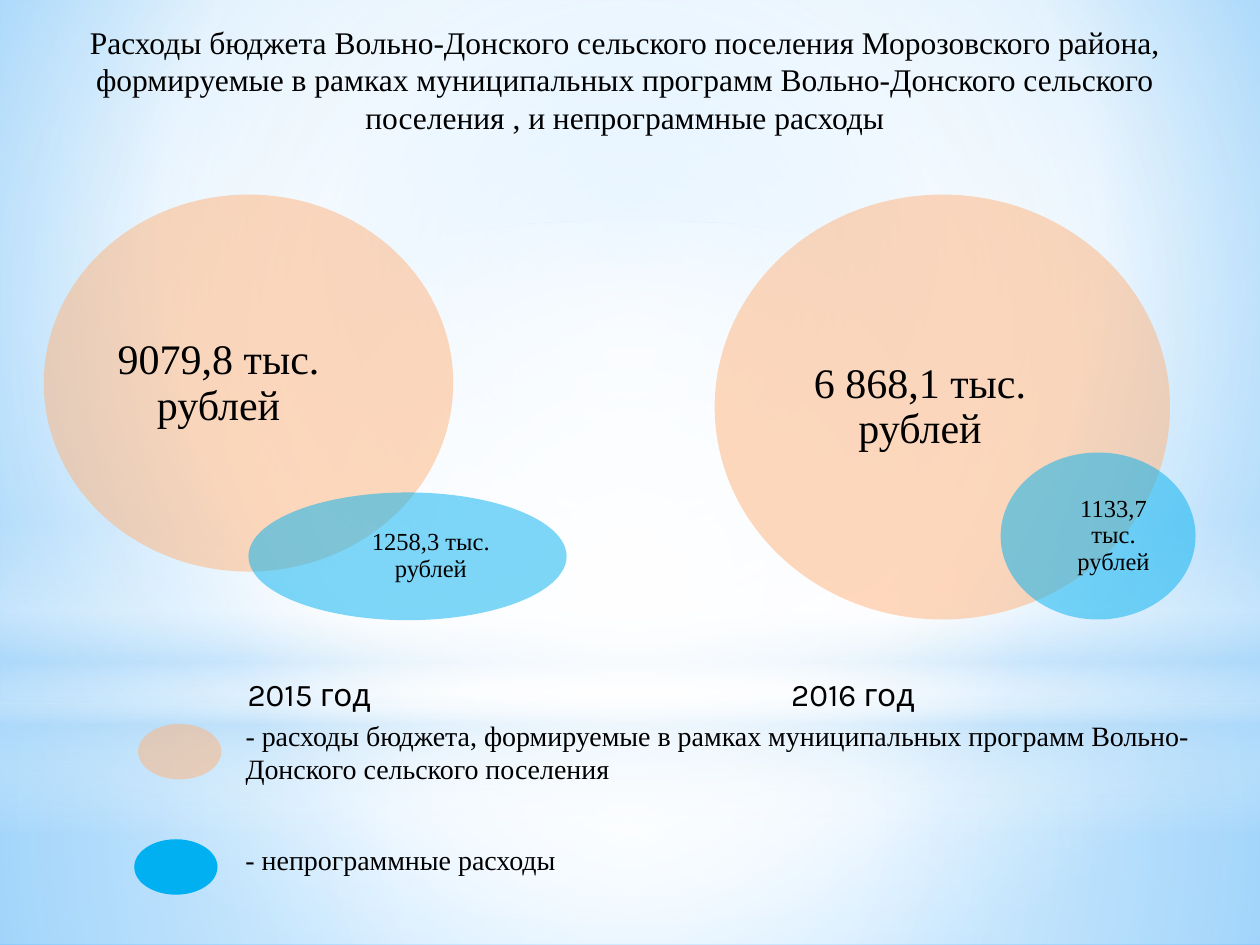
from lxml.etree import SubElement
from pptx import Presentation
from pptx.dml.color import RGBColor
from pptx.enum.shapes import MSO_SHAPE
from pptx.enum.text import MSO_ANCHOR, PP_ALIGN
from pptx.oxml.ns import qn
from pptx.util import Pt

BLACK = RGBColor(0x00, 0x00, 0x00)
WHITE = RGBColor(0xFF, 0xFF, 0xFF)
PEACH = RGBColor(0xFF, 0xB3, 0x7A)
BLUE = RGBColor(0x00, 0xB0, 0xF0)
PALE_BLUE = RGBColor(0xB4, 0xDC, 0xFA)
SKY = RGBColor(0x9E, 0xD5, 0xFF)
DEEP_SKY = RGBColor(0x5B, 0xB9, 0xFF)

SERIF = "Times New Roman"
SANS = "Karla"
CENTER = (50, 50, 50, 50)


def paint_gradient(fill, owner, stops, focus=None):
    """Stops are (position %, colour, opacity %); without a focus it runs downwards."""
    fill.gradient()
    gradient = owner.find(".//" + qn("a:gradFill"))
    gradient.clear()
    stop_list = SubElement(gradient, qn("a:gsLst"))
    for position, color, opacity in stops:
        stop = SubElement(stop_list, qn("a:gs"), pos=str(position * 1000))
        rgb = SubElement(stop, qn("a:srgbClr"), val=str(color))
        SubElement(rgb, qn("a:alpha"), val=str(opacity * 1000))
    if focus:
        circle = SubElement(gradient, qn("a:path"), path="circle")
        edges = {side: str(edge * 1000) for side, edge in zip("ltrb", focus)}
        SubElement(circle, qn("a:fillToRect"), edges)
    else:
        SubElement(gradient, qn("a:lin"), ang="5400000", scaled="0")


def add_text(box, text, size, font=SERIF, align=PP_ALIGN.LEFT):
    frame = slide.shapes.add_textbox(*map(Pt, box)).text_frame
    frame.word_wrap = True
    frame.text = text
    paragraph = frame.paragraphs[0]
    paragraph.alignment = align
    run_font = paragraph.runs[0].font
    run_font.name = font
    run_font.size = Pt(size)
    run_font.color.rgb = BLACK
    return frame


prs = Presentation()
prs.slide_width, prs.slide_height = Pt(720), Pt(540)
slide = prs.slides.add_slide(prs.slide_layouts[6])

# Background glow
paint_gradient(
    slide.background.fill, slide.element,
    [(0, SKY, 100), (60, WHITE, 100), (100, DEEP_SKY, 100)], (20, 10, 20, 60))

glow_layers = [
    (MSO_SHAPE.RECTANGLE, (0, 402, 720, 138),
     [(0, WHITE, 91), (37, WHITE, 76), (100, PALE_BLUE, 79)], CENTER),
    (MSO_SHAPE.RECTANGLE, (0, 0, 720, 402),
     [(0, WHITE, 89), (48, WHITE, 62), (100, PALE_BLUE, 79)], CENTER),
    (MSO_SHAPE.RECTANGLE, (0, 297, 720, 180),
     [(0, WHITE, 0), (29, WHITE, 30), (45, PALE_BLUE, 40),
      (55, WHITE, 26), (65, PALE_BLUE, 60), (100, WHITE, 0)], None),
    (MSO_SHAPE.OVAL, (0, 126, 720, 402),
     [(0, WHITE, 100), (56, WHITE, 0)], CENTER),
]
for kind, box, stops, focus in glow_layers:
    layer = slide.shapes.add_shape(kind, *map(Pt, box))
    layer.shadow.inherit = False
    layer.line.fill.background()
    paint_gradient(layer.fill, layer.element, stops, focus)

add_text(
    (31, 9.4, 652.3, 72.7),
    "Расходы бюджета Вольно-Донского сельского поселения Морозовского района, "
    "формируемые в рамках муниципальных программ Вольно-Донского сельского "
    "поселения , и непрограммные расходы", 18, align=PP_ALIGN.CENTER)

# Expense circles, then the legend markers
ovals = [
    ((408.4, 111.2, 260.2, 242.8), PEACH, 50),
    ((571.8, 258.6, 111.4, 95.4), BLUE, 50),
    ((25, 111.2, 234, 215.4), PEACH, 50),
    ((142, 281.4, 181.8, 73), BLUE, 50),
    ((78.9, 413.7, 47.6, 31.7), PEACH, 50),
    ((76.7, 479.6, 47.6, 31.7), BLUE, 100),
]
for box, color, opacity in ovals:
    oval = slide.shapes.add_shape(MSO_SHAPE.OVAL, *map(Pt, box))
    oval.shadow.inherit = False
    oval.line.fill.background()
    oval.fill.solid()
    oval.fill.fore_color.rgb = color
    rgb = oval.element.spPr.find(".//" + qn("a:srgbClr"))
    SubElement(rgb, qn("a:alpha"), val=str(opacity * 1000))

amounts = [
    ((432.7, 133, 186, 199.2), "6 868,1 тыс. рублей", 24),
    ((607, 271.6, 58.6, 69.4), "1133,7 тыс. рублей", 14),
    ((57.6, 136.8, 134.6, 164.9), "9079,8 тыс. рублей", 24),
    ((193.7, 290.2, 105.1, 55.4), "1258,3 тыс. рублей", 14),
]
for box, amount, size in amounts:
    frame = add_text(box, amount, size, align=PP_ALIGN.CENTER)
    frame.vertical_anchor = MSO_ANCHOR.MIDDLE
    frame.margin_left = frame.margin_right = 0
    frame.margin_top = frame.margin_bottom = 0
    frame.paragraphs[0].line_spacing = 0.9

add_text(
    (133.2, 406.8, 555.8, 46),
    "- расходы бюджета, формируемые в рамках муниципальных программ "
    "Вольно-Донского сельского поселения", 16)
add_text((133.2, 478.1, 487.4, 26.7), "- непрограммные расходы", 16)

add_text((84.2, 382.3, 185, 29), "2015 год", 18, SANS, PP_ALIGN.CENTER)
add_text((445, 382.3, 235.4, 29), "2016 год", 18, SANS)

prs.save("out.pptx")
